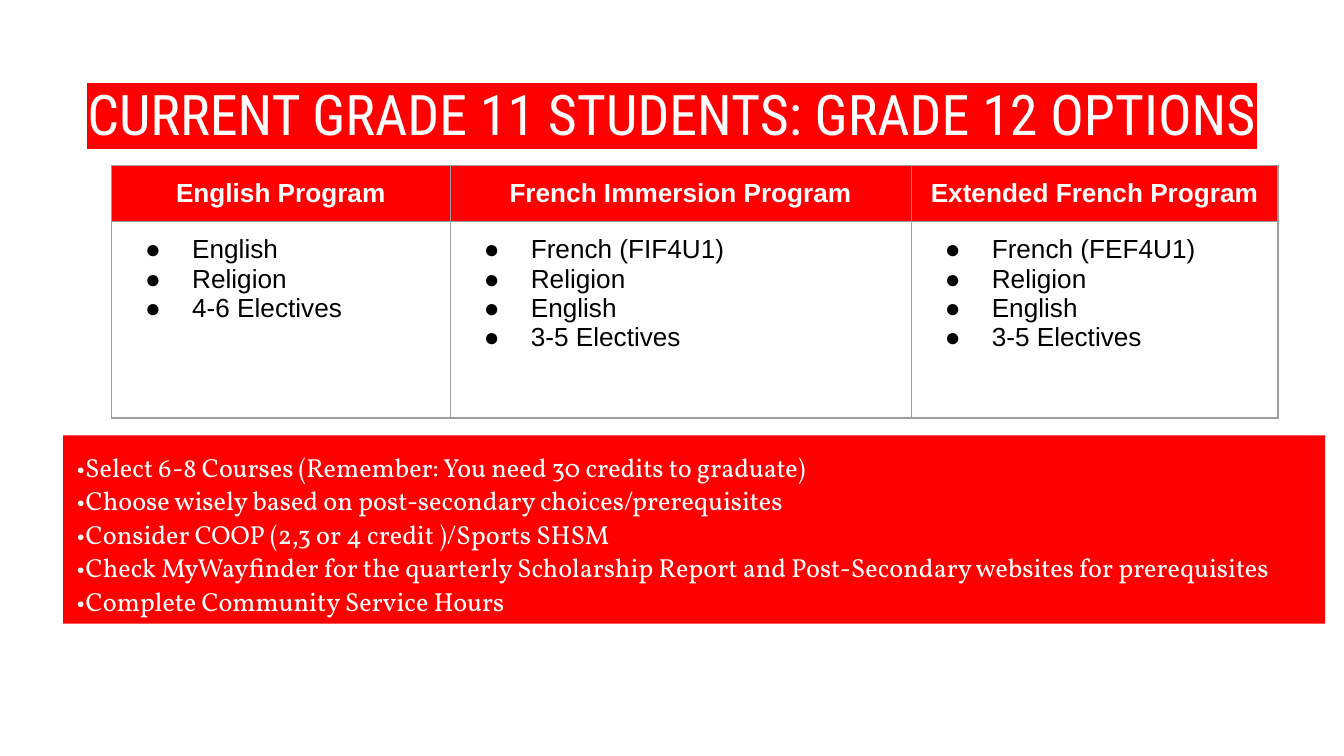
from lxml import etree
from pptx import Presentation
from pptx.dml.color import RGBColor
from pptx.enum.shapes import MSO_SHAPE as Shape
from pptx.enum.text import MSO_ANCHOR as Anchor, MSO_AUTO_SIZE as AutoSize, PP_ALIGN as Align
from pptx.oxml.ns import qn
from pptx.util import Inches, Pt

RED = RGBColor(0xFF, 0x00, 0x00)
WHITE = RGBColor(0xFF, 0xFF, 0xFF)
BLACK = RGBColor(0x00, 0x00, 0x00)
GREY = RGBColor(0x9E, 0x9E, 0x9E)

PROGRAMS = [
    ("English Program", 2.52, ["English", "Religion", "4-6 Electives"]),
    ("French Immersion Program", 3.43,
     ["French (FIF4U1)", "Religion", "English", "3-5 Electives"]),
    ("Extended French Program", 2.73,
     ["French (FEF4U1)", "Religion", "English", "3-5 Electives"]),
]
REMINDERS = [
    "•Select 6-8 Courses (Remember: You need 30 credits to graduate)",
    "•Choose wisely based on post-secondary choices/prerequisites",
    "•Consider COOP (2,3 or 4 credit )/Sports SHSM",
    "•Check MyWayfinder for the quarterly Scholarship Report and "
    "Post-Secondary websites for prerequisites",
    "•Complete Community Service Hours",
]


def add_color(parent, tag, color):
    holder = etree.SubElement(parent, qn(tag))
    etree.SubElement(holder, qn("a:srgbClr"), val=str(color))
    return holder


def add_run(paragraph, text, font, size, color, bold=False):
    run = paragraph.add_run()
    run.text = text
    run.font.name, run.font.size, run.font.bold = font, Pt(size), bold
    run.font.color.rgb = color
    return run


def add_lines(frame, lines):
    """Yield a paragraph with each line of text."""
    for index, line in enumerate(lines):
        yield (frame.add_paragraph() if index else frame.paragraphs[0]), line


def set_insets(target, inset=0.1):
    target.margin_left = target.margin_right = Inches(inset)
    target.margin_top = target.margin_bottom = Inches(inset)


def set_bullet(paragraph):
    properties = paragraph._p.get_or_add_pPr()
    properties.set("marL", str(Inches(0.5)))
    properties.set("indent", str(Inches(-0.35)))
    add_color(properties, "a:buClr", BLACK)
    etree.SubElement(properties, qn("a:buFont"), typeface="Arial")
    etree.SubElement(properties, qn("a:buChar"), char="●")


def set_borders(cell):
    properties = cell._tc.get_or_add_tcPr()
    for index, side in enumerate(("a:lnL", "a:lnR", "a:lnT", "a:lnB")):
        line = etree.Element(qn(side), w=str(Pt(0.75)))
        add_color(line, "a:solidFill", GREY)
        properties.insert(index, line)


def place_title(slide, left, top, width, height):
    title = slide.shapes.title
    title.left, title.top = Inches(left), Inches(top)
    title.width, title.height = Inches(width), Inches(height)
    frame = title.text_frame
    set_insets(frame)
    frame.word_wrap, frame.auto_size = True, AutoSize.NONE
    frame.vertical_anchor = Anchor.TOP
    heading = frame.paragraphs[0]
    heading.alignment = Align.CENTER
    run = add_run(heading, "CURRENT GRADE 11 STUDENTS: GRADE 12 OPTIONS",
                  "Roboto Condensed", 30, WHITE)
    # The highlight belongs between the fill and the font
    run_properties = run._r.get_or_add_rPr()
    highlight = add_color(run_properties, "a:highlight", RED)
    run_properties.find(qn("a:latin")).addprevious(highlight)


def place_programs(slide, left, top, width, height):
    header_height = 0.42
    programs = slide.shapes.add_table(
        2, len(PROGRAMS), Inches(left), Inches(top), Inches(width), Inches(height)).table
    programs.first_row = programs.horz_banding = False
    programs.rows[0].height = Inches(header_height)
    programs.rows[1].height = Inches(height - header_height)
    for column, (name, column_width, courses) in enumerate(PROGRAMS):
        programs.columns[column].width = Inches(column_width)
        header, body = programs.cell(0, column), programs.cell(1, column)
        for cell in (header, body):
            set_insets(cell)
            set_borders(cell)
        # Program name
        header.fill.solid()
        header.fill.fore_color.rgb = RED
        heading = header.text_frame.paragraphs[0]
        heading.alignment = Align.CENTER
        add_run(heading, name, "Arial", 14, WHITE, bold=True)
        # Course list
        body.fill.background()
        for paragraph, course in add_lines(body.text_frame, courses):
            set_bullet(paragraph)
            add_run(paragraph, course, "Arial", 14, BLACK)


def place_reminders(slide, left, top, width, height):
    panel = slide.shapes.add_shape(
        Shape.RECTANGLE, Inches(left), Inches(top), Inches(width), Inches(height))
    panel.shadow.inherit = False
    panel.fill.solid()
    panel.fill.fore_color.rgb = RED
    panel.line.fill.background()
    frame = panel.text_frame
    set_insets(frame)
    frame.word_wrap = True
    frame.vertical_anchor = Anchor.TOP
    for paragraph, reminder in add_lines(frame, REMINDERS):
        paragraph.alignment = Align.LEFT
        paragraph.line_spacing = 1.07
        add_run(paragraph, reminder, "Vollkorn", 14, WHITE)


def main():
    deck = Presentation()
    # Widescreen, 16:9
    deck.slide_width = Inches(10)
    deck.slide_height = deck.slide_width * 9 // 16
    slide = deck.slides.add_slide(deck.slide_layouts[5])
    place_title(slide, 0.34, 0.49, 9.32, 0.63)
    place_programs(slide, 0.83, 1.23, 8.68, 1.88)
    place_reminders(slide, 0.47, 3.24, 9.39, 1.4)
    deck.save("out.pptx")


if __name__ == "__main__":
    main()
